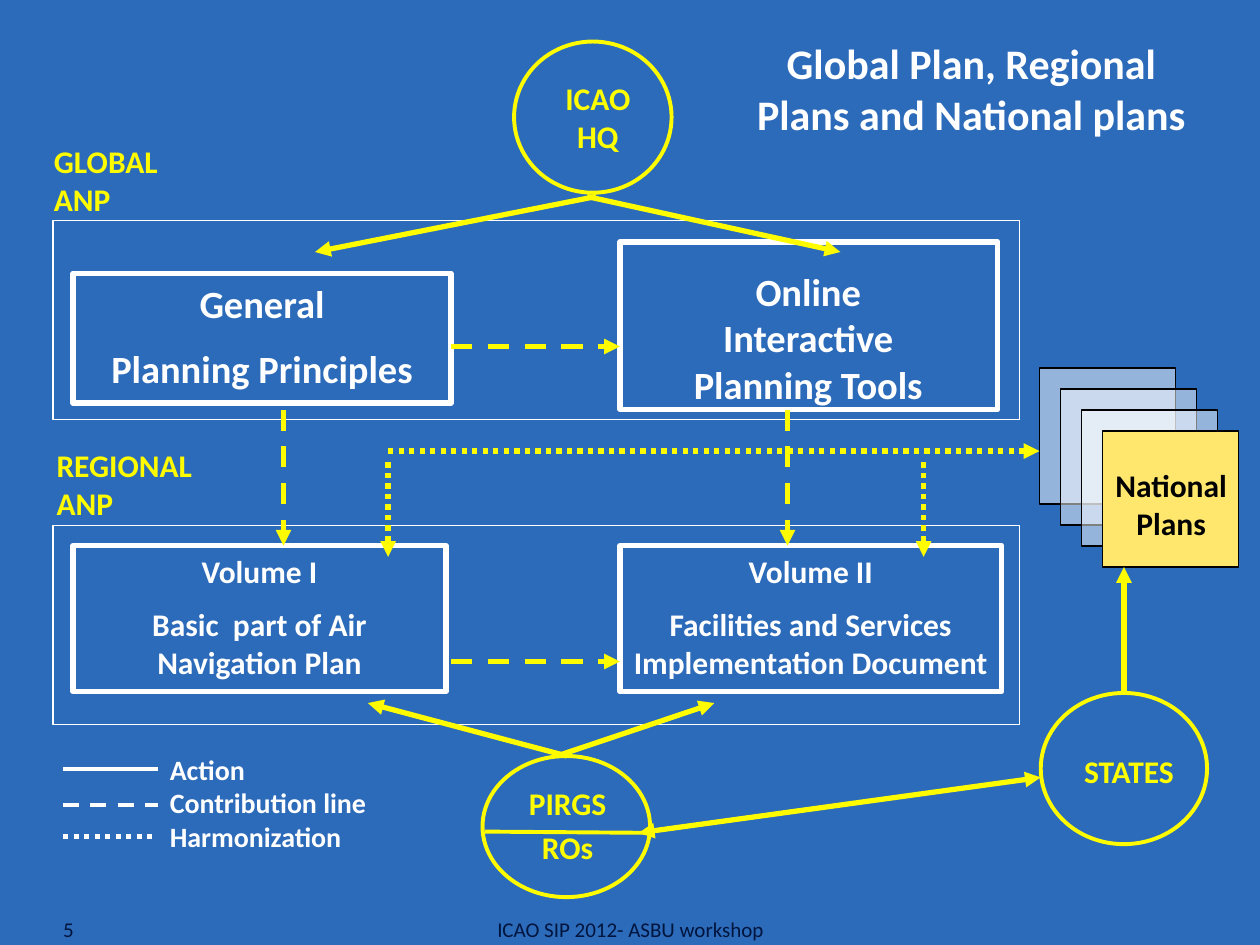
from pptx import Presentation
from pptx.dml.color import RGBColor
from pptx.enum.dml import MSO_LINE
from pptx.enum.shapes import MSO_CONNECTOR, MSO_SHAPE
from pptx.enum.text import MSO_ANCHOR, PP_ALIGN
from pptx.oxml.ns import qn
from pptx.util import Inches, Pt
from lxml.etree import SubElement

BLUE = RGBColor(0x2C, 0x6A, 0xBA)
WHITE = RGBColor(0xFF, 0xFF, 0xFF)
BLACK = RGBColor(0, 0, 0)
GOLD = RGBColor(0xFF, 0xFC, 0x00)
YELLOW = RGBColor(0xFF, 0xFF, 0x00)
SAND = RGBColor(0xFF, 0xE7, 0x6D)
NAVY = RGBColor(0x00, 0x15, 0x3E)
DASH, DOT = MSO_LINE.DASH, MSO_LINE.ROUND_DOT
LEFT, MID = PP_ALIGN.LEFT, PP_ALIGN.CENTER

# Content: left, top, width, height come first in each row
PANELS = [(0.42, 1.75, 7.67, 1.58), (0.42, 4.17, 7.67, 1.58)]
RINGS = [(4.08, 0.33, 1.25, 1.2), (3.83, 6, 1.33, 1.12), (8.26, 5.5, 1.32, 1.2)]
# Boxes: place, paragraphs, size, space before
BOXES = [
    ((0.58, 2.17, 3, 1.03), ["General", "Planning Principles"], 22, 11),
    ((4.92, 1.92, 3, 1.33), [], 22, 0),
    ((0.58, 4.33, 2.96, 1.16),
     ["Volume I", "Basic  part of Air Navigation Plan"], 18, 9),
    ((4.92, 4.33, 3.03, 1.16),
     ["Volume II", "Facilities and Services Implementation Document"], 18, 9),
]
# Labels: place, paragraphs, size, colour, alignment, space before
LABELS = [
    ((5.75, 0.25, 3.92, 0.91),
     ["Global Plan, Regional Plans and National plans"], 24, WHITE, MID, 0),
    ((0.33, 1.08, 1.96, 0.77), ["GLOBAL", "ANP"], 18, GOLD, LEFT, 0),
    ((0.35, 3.49, 1.75, 0.77), ["REGIONAL", "ANP"], 18, GOLD, LEFT, 0),
    ((5, 2.08, 2.83, 1.21),
     ["Online", "Interactive", "Planning Tools"], 22, WHITE, MID, 0),
    ((8.67, 3.65, 1.25, 0.7), ["National Plans"], 18, BLACK, MID, 0),
    ((4.21, 0.58, 1.07, 0.77), ["ICAO HQ"], 18, YELLOW, MID, 0),
    ((3.97, 6.17, 1.07, 0.83), ["PIRGS", "ROs"], 18, YELLOW, MID, 3.6),
    ((8.25, 5.92, 1.42, 0.43), ["STATES"], 18, YELLOW, MID, 0),
    ((1.25, 5.92, 2.5, 0.9),
     ["Action", "Contribution line", "Harmonization"], 16, WHITE, LEFT, 0),
]
# Arrows: from, to, dash
ARROWS = [
    ((4.73, 1.56), (2.5, 2), None),
    ((4.66, 1.56), (6.67, 2), None),
    ((4.5, 6), (2.92, 5.58), None),
    ((4.42, 6), (5.67, 5.58), None),
    ((8.92, 5.5), (8.92, 4.5), None),
    ((3.58, 2.75), (4.92, 2.75), DASH),
    ((3.58, 5.25), (4.92, 5.25), DASH),
    ((2.25, 3.25), (2.25, 4.33), DASH),
    ((6.25, 3.25), (6.25, 4.33), DASH),
    ((3.08, 3.67), (3.08, 4.42), DOT),
    ((7.33, 3.67), (7.33, 4.42), DOT),
    ((3.08, 3.58), (8.25, 3.58), DOT),
]
# Legend: height on the slide, width, dash
LEGEND = [(6.1, 2.25, None), (6.39, 2.25, DASH), (6.64, 3, DOT)]

deck = Presentation()
deck.slide_width, deck.slide_height = Inches(10), Inches(7.5)
slide = deck.slides.add_slide(deck.slide_layouts[6])
slide.background.fill.solid()
slide.background.fill.fore_color.rgb = BLUE


def write(shape, paras, size, color, align=MID, gap=0, bold=True):
    frame = shape.text_frame
    frame.word_wrap = True
    frame.vertical_anchor = MSO_ANCHOR.TOP
    for i, text in enumerate(paras):
        para = frame.add_paragraph() if i else frame.paragraphs[0]
        para.alignment = align
        if i:
            para.space_before = Pt(gap)
        run = para.add_run()
        run.text = text
        font = run.font
        font.name, font.size, font.bold = "Calibri", Pt(size), bold
        font.color.rgb = color
    return frame


def label(place, *args, **opts):
    box = slide.shapes.add_textbox(*map(Inches, place))
    return write(box, *args, **opts)


def draw(kind, place, color, width, fill=None):
    shape = slide.shapes.add_shape(kind, *map(Inches, place))
    shape.shadow.inherit = False
    if fill is None:
        shape.fill.background()
    else:
        shape.fill.solid()
        shape.fill.fore_color.rgb = fill
    shape.line.color.rgb = color
    shape.line.width = Pt(width)
    return shape


def link(start, end, color=GOLD, width=3, dash=None, tips=()):
    line = slide.shapes.add_connector(
        MSO_CONNECTOR.STRAIGHT, *map(Inches, start + end))
    line.line.color.rgb = color
    line.line.width = Pt(width)
    if dash:
        line.line.dash_style = dash
    props = line._element.spPr
    for tip in tips:
        SubElement(props.find(qn("a:ln")), qn(tip)).set("type", "triangle")
    SubElement(props, qn("a:effectLst"))


# Stack of national plans, the front sheet opaque
for i in range(4):
    step = i / 6
    front = i == 3
    sheet = draw(MSO_SHAPE.RECTANGLE, (8.25 + step, 2.92 + step, 1.08, 1.08),
                 BLACK, 0.75, SAND if front else WHITE)
    if not front:
        tint = sheet._element.spPr.find(qn("a:solidFill"))[0]
        SubElement(tint, qn("a:alpha")).set("val", "50000")

# Panels, boxes and rings
for place in PANELS:
    draw(MSO_SHAPE.RECTANGLE, place, WHITE, 0.75)
for place, paras, size, gap in BOXES:
    box = draw(MSO_SHAPE.RECTANGLE, place, WHITE, 3)
    write(box, paras, size, WHITE, gap=gap)
for place in RINGS:
    draw(MSO_SHAPE.OVAL, place, GOLD, 2.25)

# Labels
for row in LABELS:
    label(*row)

# Links between the parts
link((3.85, 6.6), (5.16, 6.61), width=2.25)
link((5.07, 6.61), (8.26, 6.17), tips=("a:headEnd", "a:tailEnd"))
for start, end, dash in ARROWS:
    link(start, end, dash=dash, tips=("a:tailEnd",))

# Legend samples
for y, width, dash in LEGEND:
    link((0.5, y), (1.25, y), WHITE, width, dash)

# Footer
page = label((0, 7.25, 3.42, 0.25), ["5"], 12, NAVY, LEFT, bold=False)
page.margin_left = Inches(0.5)
page.margin_right = page.margin_top = page.margin_bottom = 0
foot = label((1.42, 7.25, 7.17, 0.25), ["ICAO SIP 2012- ASBU workshop"],
             12, NAVY, bold=False)
for frame in (page, foot):
    frame.vertical_anchor = MSO_ANCHOR.MIDDLE

deck.save("out.pptx")
